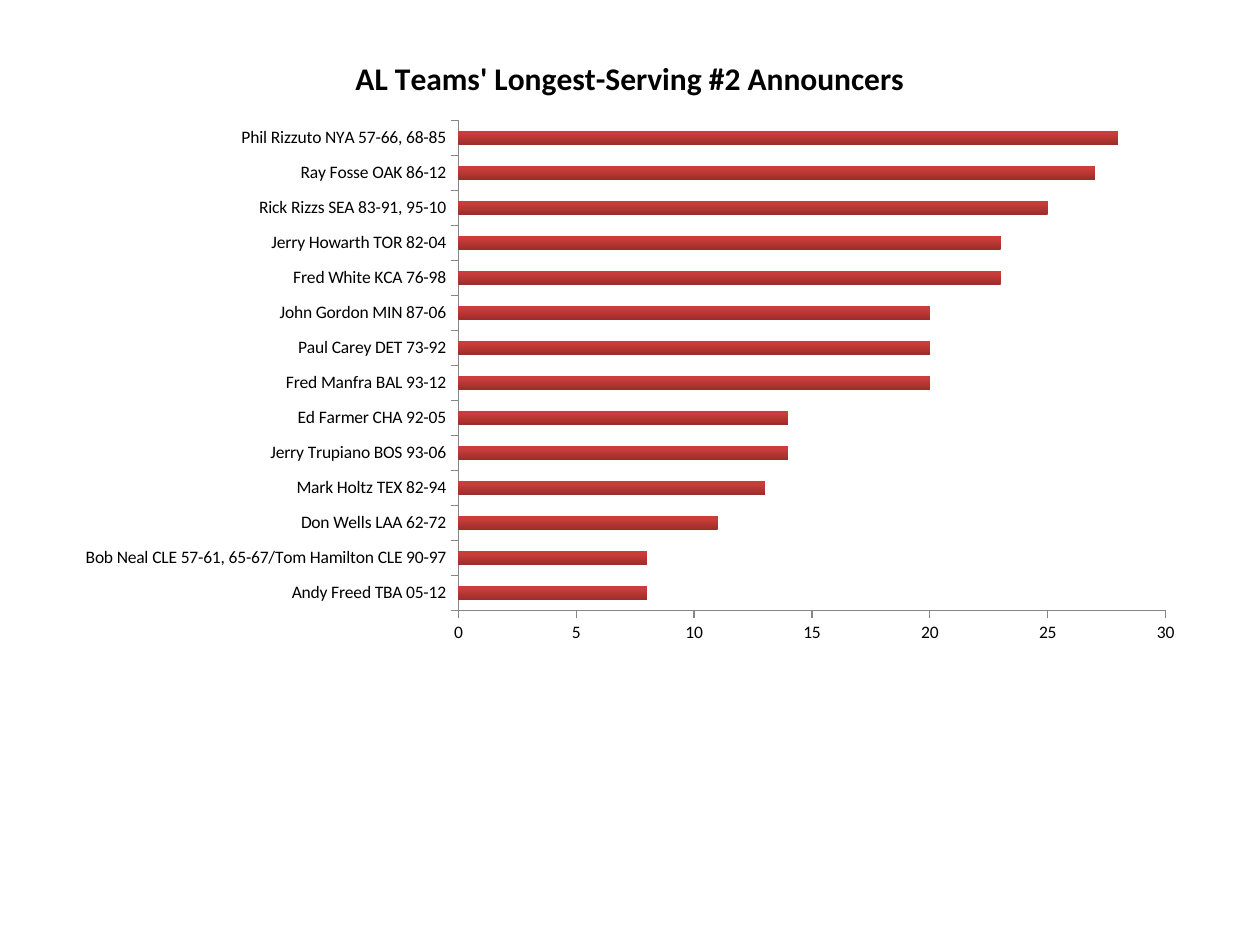
"""Build a slide with a bar chart of the longest-serving number two announcers."""
from dataclasses import dataclass

from pptx import Presentation
from pptx import util as u
from pptx.chart.data import CategoryChartData
from pptx.dml.color import RGBColor
from pptx.enum import chart as ch

HEADING = "AL Teams' Longest-Serving #2 Announcers"
YEARS_SERVED = [
    ("Andy Freed TBA 05-12", 8),
    ("Bob Neal CLE 57-61, 65-67/Tom Hamilton CLE 90-97", 8),
    ("Don Wells LAA 62-72", 11),
    ("Mark Holtz TEX 82-94", 13),
    ("Jerry Trupiano BOS 93-06", 14),
    ("Ed Farmer CHA 92-05", 14),
    ("Fred Manfra BAL 93-12", 20),
    ("Paul Carey DET 73-92", 20),
    ("John Gordon MIN 87-06", 20),
    ("Fred White KCA 76-98", 23),
    ("Jerry Howarth TOR 82-04", 23),
    ("Rick Rizzs SEA 83-91, 95-10", 25),
    ("Ray Fosse OAK 86-12", 27),
    ("Phil Rizzuto NYA 57-66, 68-85", 28),
]


@dataclass(frozen=True)
class Theme:
    """Hold the fonts, sizes and colours of the slide."""
    font: str = "Calibri"
    label_size: int = 10
    heading_size: int = 18
    ink: str = "000000"
    axis: str = "868686"
    bar_bottom: str = "9B2D2A"
    bar_top: str = "CB3D3A"


THEME = Theme()


def style_font(font, size, bold=False):
    """Apply the theme to a font."""
    font.name, font.size, font.bold = THEME.font, u.Pt(size), bold
    font.color.rgb = RGBColor.from_string(THEME.ink)


def style_axis(axis):
    """Give an axis outside ticks and a thin grey line."""
    axis.has_major_gridlines = False
    axis.major_tick_mark = ch.XL_TICK_MARK.OUTSIDE
    axis.minor_tick_mark = ch.XL_TICK_MARK.NONE
    axis.format.line.color.rgb = RGBColor.from_string(THEME.axis)
    axis.format.line.width = u.Pt(0.75)


def style_bars(plot):
    """Shade the bars from dark at the bottom to light at the top."""
    plot.gap_width = 150
    plot.vary_by_categories = False
    fill = plot.series[0].format.fill
    fill.gradient()
    fill.gradient_angle = 90
    shades = [(0, THEME.bar_bottom), (0.8, THEME.bar_top)]
    for stop, (position, colour) in zip(fill.gradient_stops, shades):
        stop.position = position
        stop.color.rgb = RGBColor.from_string(colour)


def main():
    """Build and save the slide."""
    deck = Presentation()
    deck.slide_width, deck.slide_height = u.Inches(10), u.Inches(7.5)
    slide = deck.slides.add_slide(deck.slide_layouts[6])

    announcers, years = zip(*YEARS_SERVED)
    tenure = CategoryChartData()
    tenure.categories = announcers
    tenure.add_series(HEADING, years)
    margin = int(deck.slide_width * 0.05)
    chart = slide.shapes.add_chart(
        ch.XL_CHART_TYPE.BAR_CLUSTERED, margin, margin // 2,
        deck.slide_width - 2 * margin, int(deck.slide_height * 0.66), tenure,
    ).chart

    style_font(chart.font, THEME.label_size)
    chart.has_legend = False
    chart.has_title = True
    heading = chart.chart_title.text_frame
    heading.text = HEADING
    style_font(heading.paragraphs[0].font, THEME.heading_size, bold=True)
    chart.chart_title.include_in_layout = False

    for axis in (chart.category_axis, chart.value_axis):
        style_axis(axis)
    chart.value_axis.minimum_scale = 0
    chart.value_axis.maximum_scale = 30
    chart.value_axis.major_unit = 5
    style_bars(chart.plots[0])
    deck.save("out.pptx")


if __name__ == "__main__":
    main()
